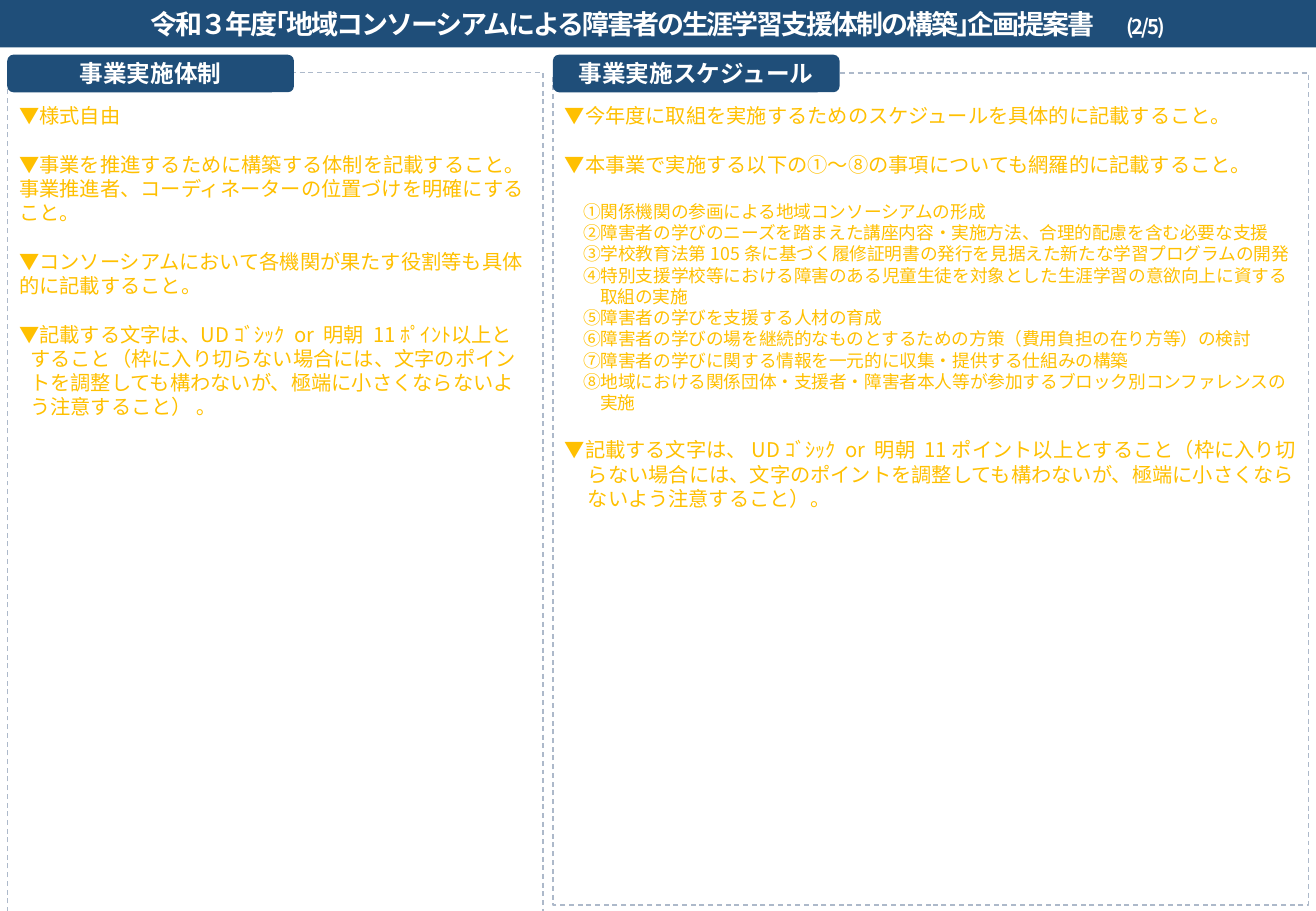
from dataclasses import dataclass

from lxml.etree import SubElement
from pptx import Presentation
from pptx.dml.color import RGBColor
from pptx.enum.dml import MSO_LINE
from pptx.enum.shapes import MSO_SHAPE
from pptx.enum.text import MSO_ANCHOR, MSO_AUTO_SIZE, PP_ALIGN
from pptx.oxml.ns import qn
from pptx.util import Inches, Pt


@dataclass(frozen=True)
class Theme:
    """Colours, font and type sizes of the form."""
    font: str = "Noto Sans CJK JP"
    navy: str = "1F4E79"
    edge: str = "ADB9CA"
    gold: str = "FFC000"
    white: str = "FFFFFF"
    title: float = 16
    label: float = 14
    body: float = 12
    item: float = 10.5
    lead: float = 1.2


@dataclass(frozen=True)
class Note:
    """A paragraph with its indents in inches."""
    text: str
    left: float = 0
    hang: float = 0
    item: bool = False


THEME = Theme()
TITLE = "令和３年度｢地域コンソーシアムによる障害者の生涯学習支援体制の構築｣企画提案書　"
PAGE = "(2/5)"
SYSTEM = [
    Note("▼様式自由"),
    Note("▼事業を推進するために構築する体制を記載すること｡事業推進者、コーディネーターの位置づけを明確にすること。"),
    Note("▼コンソーシアムにおいて各機関が果たす役割等も具体的に記載すること。"),
    Note("▼記載する文字は､ UDｺﾞｼｯｸ or 明朝 11ﾎﾟｲﾝﾄ以上とすること（枠に入り切らない場合には、"
         "文字のポイントを調整しても構わないが、極端に小さくならないよう注意すること） ｡", 0.09, 0.09),
]
ITEMS = [
    "①関係機関の参画による地域コンソーシアムの形成",
    "②障害者の学びのニーズを踏まえた講座内容・実施方法、合理的配慮を含む必要な支援",
    "③学校教育法第105条に基づく履修証明書の発行を見据えた新たな学習プログラムの開発",
    "④特別支援学校等における障害のある児童生徒を対象とした生涯学習の意欲向上に資する取組の実施",
    "⑤障害者の学びを支援する人材の育成",
    "⑥障害者の学びの場を継続的なものとするための方策（費用負担の在り方等）の検討",
    "⑦障害者の学びに関する情報を一元的に収集・提供する仕組みの構築",
    "⑧地域における関係団体・支援者・障害者本人等が参加するブロック別コンファレンスの実施",
]
SCHEDULE = [
    Note("▼今年度に取組を実施するためのスケジュールを具体的に記載すること。"),
    Note("▼本事業で実施する以下の①～⑧の事項についても網羅的に記載すること。"),
    *[Note(text, 0.29, 0.14, True) for text in ITEMS],
    Note("▼記載する文字は、UDｺﾞｼｯｸ or 明朝 11ポイント以上とすること（枠に入り切らない場合には、"
         "文字のポイントを調整しても構わないが、極端に小さくならないよう注意すること）。", 0.19, 0.19),
]


def style(run, size, color, bold=False):
    """Set the font, size and colour of a run."""
    run.font.size = Pt(size)
    run.font.bold = bold
    run.font.color.rgb = RGBColor.from_string(color)
    run.font.name = THEME.font
    SubElement(run._r.get_or_add_rPr(), qn("a:ea"), typeface=THEME.font)


def paint(shape, color):
    """Fill a shape with one colour and no outline."""
    shape.fill.solid()
    shape.fill.fore_color.rgb = RGBColor.from_string(color)
    shape.line.fill.background()


def banner(slide, x, y, w, h):
    """Place the title band with its page mark."""
    title = slide.shapes.title
    title.left, title.top, title.width, title.height = map(Inches, (x, y, w, h))
    paint(title, THEME.navy)
    frame = title.text_frame
    frame.auto_size = MSO_AUTO_SIZE.NONE
    frame.vertical_anchor = MSO_ANCHOR.MIDDLE
    para = frame.paragraphs[0]
    para.alignment = PP_ALIGN.CENTER
    for text, size in ((TITLE, THEME.title), (PAGE, THEME.body)):
        run = para.add_run()
        run.text = text
        style(run, size, THEME.white, True)
        run._r.get_or_add_rPr().set("spc", "-120")


def label(slide, text, x, y, w, h):
    """Place the rounded heading of a panel."""
    tab = slide.shapes.add_shape(MSO_SHAPE.ROUNDED_RECTANGLE, *map(Inches, (x, y, w, h)))
    tab.shadow.inherit = False
    paint(tab, THEME.navy)
    frame = tab.text_frame
    frame.text = text
    frame.vertical_anchor = MSO_ANCHOR.MIDDLE
    para = frame.paragraphs[0]
    para.alignment = PP_ALIGN.CENTER
    style(para.runs[0], THEME.label, THEME.white, True)


def write(frame, notes):
    """Write the notes, with a line of space around each block."""
    frame.text = "\n".join(note.text for note in notes)
    last = None
    for para, note in zip(frame.paragraphs, notes):
        size = THEME.item if note.item else THEME.body
        props = para._p.get_or_add_pPr()
        props.set("marL", str(Inches(note.left)))
        props.set("indent", str(-Inches(note.hang)))
        para.alignment = PP_ALIGN.LEFT
        para.line_spacing = Pt(size * THEME.lead)
        if last and not (last.item and note.item):
            para.space_before = Pt(THEME.body * THEME.lead)
        style(para.runs[0], size, THEME.gold)
        last = note


def panel(slide, head, notes, x, y, w, h):
    """Place a dashed panel with its heading on the top edge."""
    box = slide.shapes.add_shape(MSO_SHAPE.RECTANGLE, *map(Inches, (x, y, w, h)))
    box.shadow.inherit = False
    box.fill.background()
    box.line.color.rgb = RGBColor.from_string(THEME.edge)
    box.line.width = Pt(0.75)
    box.line.dash_style = MSO_LINE.DASH
    frame = box.text_frame
    frame.word_wrap = True
    frame.vertical_anchor = MSO_ANCHOR.TOP
    frame.margin_top = Inches(0.25)
    write(frame, notes)
    label(slide, head, x, y - 0.15, 2.36, 0.31)


def main():
    """Build the proposal form and save it."""
    deck = Presentation()
    deck.slide_width, deck.slide_height = Inches(10.83), Inches(7.5)
    slide = deck.slides.add_slide(deck.slide_layouts[5])
    banner(slide, 0, 0, 10.83, 0.39)
    panel(slide, "事業実施体制", SYSTEM, 0.06, 0.6, 4.41, 7.57)
    panel(slide, "事業実施スケジュール", SCHEDULE, 4.55, 0.6, 6.22, 6.85)
    deck.save("out.pptx")


if __name__ == "__main__":
    main()
